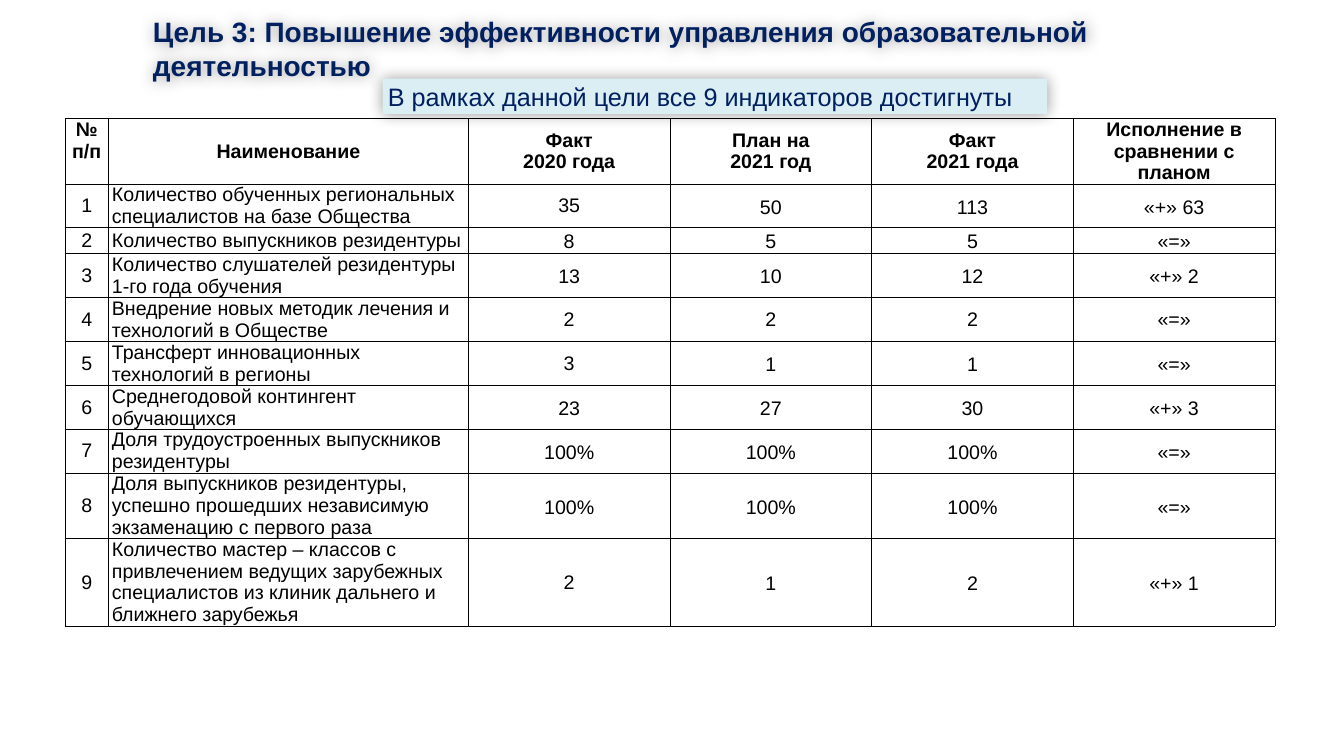
from lxml.etree import SubElement
from pptx import Presentation
from pptx.dml.color import RGBColor
from pptx.enum.shapes import MSO_SHAPE as Shape
from pptx.enum.text import MSO_ANCHOR as Anchor, PP_ALIGN as Align
from pptx.oxml.ns import qn
from pptx.util import Inches, Pt

HUES = {"navy": "002060", "ice": "DBEEF4", "black": "000000"}
FONT = "Arial"

TITLE = ["Цель 3: Повышение эффективности управления образовательной",
         "деятельностью"]
NOTE = ["В рамках данной цели все 9 индикаторов достигнуты"]

HEAD = [["№ п/п"], ["Наименование"], ["Факт", "2020 года"],
        ["План на", "2021 год"], ["Факт", "2021 года"],
        ["Исполнение в сравнении с планом"]]
# name, fact 2020, plan 2021, fact 2021, result against plan
ROWS = [
    ("Количество обученных региональных специалистов на базе Общества",
     "35", "50", "113", "«+» 63"),
    ("Количество выпускников резидентуры", "8", "5", "5", "«=»"),
    ("Количество слушателей резидентуры 1-го года обучения",
     "13", "10", "12", "«+» 2"),
    ("Внедрение новых методик лечения и технологий в Обществе",
     "2", "2", "2", "«=»"),
    ("Трансферт инновационных технологий в регионы", "3", "1", "1", "«=»"),
    ("Среднегодовой контингент обучающихся", "23", "27", "30", "«+» 3"),
    ("Доля трудоустроенных выпускников резидентуры",
     "100%", "100%", "100%", "«=»"),
    ("Доля выпускников резидентуры, успешно прошедших независимую "
     "экзаменацию с первого раза", "100%", "100%", "100%", "«=»"),
    ("Количество мастер – классов с привлечением ведущих зарубежных "
     "специалистов из клиник дальнего и ближнего зарубежья",
     "2", "1", "2", "«+» 1"),
]
WIDTHS = [0.86, 7.14, 4, 4, 4, 4]
HEIGHTS = [1.3, 0.86, 0.5, 0.89, 0.87, 0.87, 0.87, 0.86, 1.3, 1.73]
LEFT, TOP = 1.29, 2.35
# value cells (row, column) with single line spacing
TIGHT = {(1, 2), (4, 2), (4, 3), (4, 4), (4, 5), (5, 2), (9, 2)}


def rgb(name):
    return RGBColor.from_string(HUES[name])


def write(frame, lines, size, hue, bold=False, align=Align.LEFT, gap=None):
    font = {"name": FONT, "size": Pt(size), "bold": bold}
    for i, line in enumerate(lines):
        para = frame.add_paragraph() if i else frame.paragraphs[0]
        para.alignment = align
        if gap:
            para.line_spacing = gap
        run = para.add_run()
        run.text = line
        for key, val in font.items():
            setattr(run.font, key, val)
        run.font.color.rgb = rgb(hue)


def glow(shape):
    """Give the shape a soft, centred shadow."""
    list_ = SubElement(shape._element.spPr, qn("a:effectLst"))
    shade = SubElement(list_, qn("a:outerShdw"), blurRad=str(Pt(21)),
                       dist="0", dir="0", algn="ctr", rotWithShape="0")
    color = SubElement(shade, qn("a:srgbClr"), val=HUES["black"])
    SubElement(color, qn("a:alpha"), val="39000")


def banner(slide, box, lines, size, fill=None, **style):
    shape = slide.shapes.add_shape(Shape.ROUNDED_RECTANGLE, *map(Inches, box))
    shape.adjustments[0] = 0.028
    shape.line.fill.background()
    if fill:
        shape.fill.solid()
        shape.fill.fore_color.rgb = rgb(fill)
    else:
        shape.fill.background()
    glow(shape)
    frame = shape.text_frame
    frame.word_wrap = True
    frame.vertical_anchor = Anchor.MIDDLE
    write(frame, lines, size, "navy", **style)


def border(cell):
    props = cell._tc.get_or_add_tcPr()
    for side in ("lnL", "lnR", "lnT", "lnB"):
        line = SubElement(props, qn("a:" + side), w=str(Pt(1)))
        fill = SubElement(line, qn("a:solidFill"))
        SubElement(fill, qn("a:srgbClr"), val=HUES["black"])


def grid(slide):
    body = [[[str(n)]] + [[text] for text in row]
            for n, row in enumerate(ROWS, 1)]
    table = slide.shapes.add_table(
        len(HEIGHTS), len(WIDTHS), Inches(LEFT), Inches(TOP),
        Inches(sum(WIDTHS)), Inches(sum(HEIGHTS))).table
    table.first_row = table.horz_banding = False
    for col, width in zip(table.columns, WIDTHS):
        col.width = Inches(width)
    for row, height in zip(table.rows, HEIGHTS):
        row.height = Inches(height)

    pads = {"margin_left": Inches(0.07), "margin_right": Inches(0.07),
            "margin_top": 0, "margin_bottom": 0}
    for r, row in enumerate([HEAD] + body):
        for c, lines in enumerate(row):
            cell = table.cell(r, c)
            for key, val in pads.items():
                setattr(cell, key, val)
            corner = r == c == 0
            cell.vertical_anchor = Anchor.TOP if corner else Anchor.MIDDLE
            border(cell)
            cell.fill.background()
            loose = r > 0 and c > 1 and (r, c) not in TIGHT
            write(cell.text_frame, lines, 28, "black", bold=r == 0,
                  align=Align.LEFT if r and c == 1 else Align.CENTER,
                  gap=1.15 if loose else None)


def main():
    deck = Presentation()
    deck.slide_width, deck.slide_height = Inches(26.66), Inches(15)
    slide = deck.slides.add_slide(deck.slide_layouts[6])
    grid(slide)
    banner(slide, (2.92, 0, 22.53, 1.91), TITLE, 40,
           bold=True, align=Align.JUSTIFY)
    banner(slide, (7.59, 1.56, 13.18, 0.7), NOTE, 36, fill="ice")
    deck.save("out.pptx")


if __name__ == "__main__":
    main()
